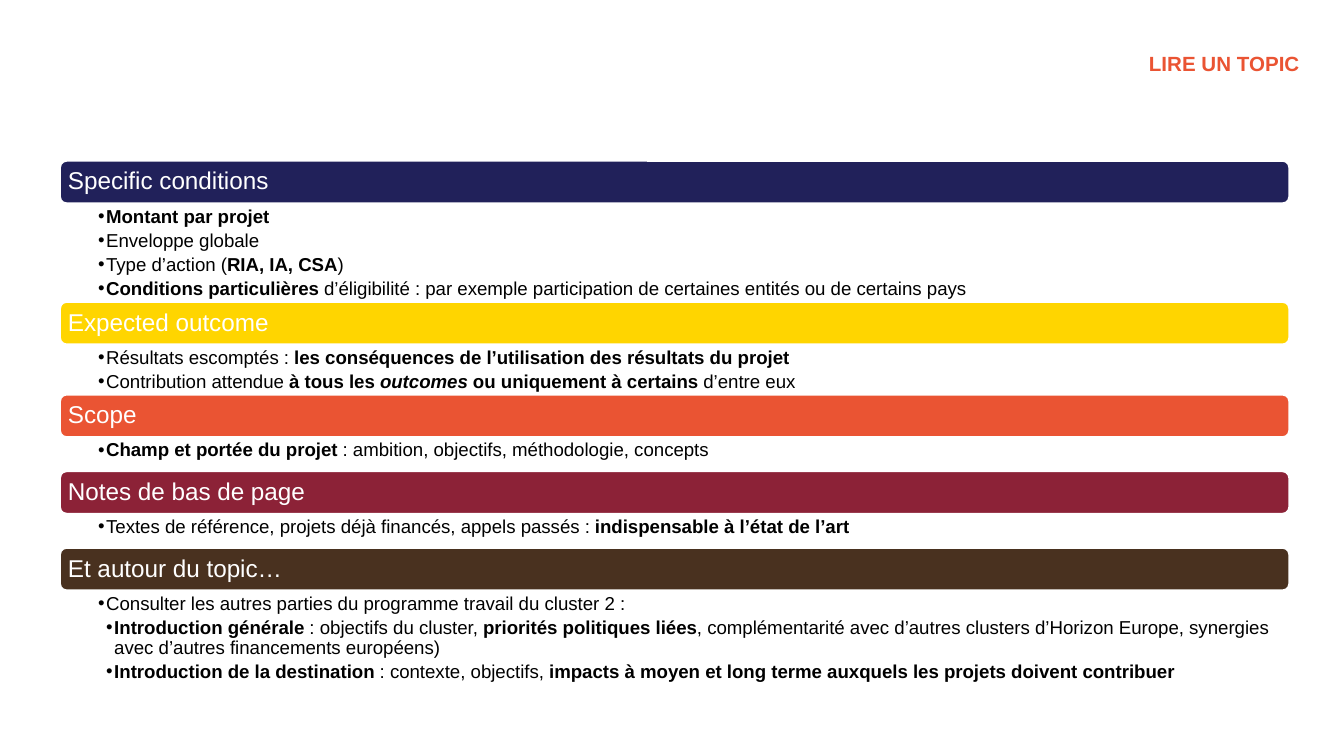
from lxml.etree import SubElement
from pptx import Presentation
from pptx.dml.color import RGBColor
from pptx.enum.shapes import MSO_SHAPE
from pptx.enum.text import MSO_ANCHOR, PP_ALIGN
from pptx.oxml.ns import qn
from pptx.util import Inches, Pt

WHITE = RGBColor(0xFF, 0xFF, 0xFF)
BLACK = RGBColor(0x00, 0x00, 0x00)
NAVY = RGBColor(0x21, 0x21, 0x5A)
YELLOW = RGBColor(0xFF, 0xD5, 0x00)
ORANGE = RGBColor(0xEA, 0x54, 0x33)
BURGUNDY = RGBColor(0x8C, 0x22, 0x37)
BROWN = RGBColor(0x49, 0x31, 0x1F)

BAR_HEIGHT = 0.33
HANGING = 0.06

SECTIONS = [
    ("Specific conditions", NAVY, 0.72, [
        (1, "*Montant par projet*"),
        (1, "Enveloppe globale"),
        (1, "Type d’action (*RIA, IA, CSA*)"),
        (1, "*Conditions particulières *d’éligibilité : par exemple "
            "participation de certaines entités ou de certains pays"),
    ]),
    ("Expected outcome", YELLOW, 0.36, [
        (1, "Résultats escomptés : *les conséquences de l’utilisation "
            "des résultats du projet*"),
        (1, "Contribution attendue *à tous les _outcomes_ ou uniquement "
            "à certains *d’entre eux"),
    ]),
    ("Scope", ORANGE, 0.24, [
        (1, "*Champ et portée du projet *: ambition, objectifs, "
            "méthodologie, concepts"),
    ]),
    ("Notes de bas de page", BURGUNDY, 0.24, [
        (1, "Textes de référence, projets déjà financés, appels passés : "
            "*indispensable à l’état de l’art*"),
    ]),
    ("Et autour du topic…", BROWN, 0.68, [
        (1, "Consulter les autres parties du programme travail du cluster 2 :"),
        (2, "*Introduction générale *: objectifs du cluster, *priorités "
            "politiques liées*, complémentarité avec d’autres clusters "
            "d’Horizon Europe, synergies avec d’autres financements européens)"),
        (2, "*Introduction de la destination *: contexte, objectifs, *impacts "
            "à moyen et long terme auxquels les projets doivent contribuer*"),
    ]),
]


def set_font(para, size, color):
    """Give a paragraph its typeface, size and colour."""
    para.font.name = "Arial"
    para.font.size = Pt(size)
    para.font.color.rgb = color


def set_margins(frame, left, top, right, bottom):
    """Wrap a text frame and set its margins in inches."""
    frame.word_wrap = True
    frame.margin_left, frame.margin_top = Inches(left), Inches(top)
    frame.margin_right, frame.margin_bottom = Inches(right), Inches(bottom)


def add_bullet(para, level):
    """Make a paragraph a bulleted item with a hanging indent."""
    para.level = level
    properties = para._p.get_or_add_pPr()
    properties.set("marL", str(Inches(HANGING * level)))
    properties.set("indent", str(-Inches(HANGING)))
    color = SubElement(properties, qn("a:buClr"))
    SubElement(color, qn("a:srgbClr")).set("val", str(BLACK))
    SubElement(properties, qn("a:buFont")).set("typeface", "Arial")
    SubElement(properties, qn("a:buChar")).set("char", "•")


def add_spans(para, text):
    """Add runs, bold between asterisks and italic between underscores."""
    for bold, chunk in enumerate(text.split("*")):
        for italic, words in enumerate(chunk.split("_")):
            if words:
                span = para.add_run()
                span.text = words
                span.font.bold = bold % 2 == 1
                span.font.italic = italic % 2 == 1


def add_title(page, left, top, width, height):
    """Place the right-aligned title."""
    box = page.shapes.add_textbox(*map(Inches, (left, top, width, height)))
    set_margins(box.text_frame, 0, 0, 0, 0)
    para = box.text_frame.paragraphs[0]
    para.text = "LIRE UN TOPIC"
    para.alignment = PP_ALIGN.RIGHT
    set_font(para, 11, ORANGE)
    para.font.bold = True


def add_bar(page, left, top, width, heading, color):
    """Place one coloured section heading."""
    bar = page.shapes.add_shape(
        MSO_SHAPE.ROUNDED_RECTANGLE,
        *map(Inches, (left, top, width, BAR_HEIGHT)))
    bar.shadow.inherit = False
    bar.fill.solid()
    bar.fill.fore_color.rgb = color
    bar.line.color.rgb = WHITE
    bar.line.width = Pt(2)
    frame = bar.text_frame
    set_margins(frame, 0.05, 0.05, 0.05, 0.05)
    frame.vertical_anchor = MSO_ANCHOR.MIDDLE
    para = frame.paragraphs[0]
    para.text = heading
    para.alignment = PP_ALIGN.LEFT
    para.line_spacing = 0.9
    set_font(para, 13, WHITE)


def add_items(page, left, top, width, height, items):
    """Place the bulleted items of one section."""
    box = page.shapes.add_textbox(*map(Inches, (left, top, width, height)))
    frame = box.text_frame
    set_margins(frame, 0.29, 0.02, 0.1, 0.02)
    for index, (level, text) in enumerate(items):
        para = frame.add_paragraph() if index else frame.paragraphs[0]
        add_bullet(para, level)
        para.line_spacing = 0.9
        para.space_after = Pt(2)
        set_font(para, 10, BLACK)
        add_spans(para, text)


def add_sections(page, left, top, width):
    """Stack the sections down the page."""
    for heading, color, height, items in SECTIONS:
        add_bar(page, left, top, width, heading, color)
        top += BAR_HEIGHT
        add_items(page, left, top, width, height, items)
        top += height


def main():
    """Build and save the deck."""
    deck = Presentation()
    deck.slide_width = Inches(10)
    deck.slide_height = deck.slide_width * 9 // 16
    page = deck.slides.add_slide(deck.slide_layouts[6])
    add_title(page, 3.96, 0.38, 5.71, 0.39)
    add_sections(page, 0.44, 1.19, 9.16)
    deck.save("out.pptx")


if __name__ == "__main__":
    main()
